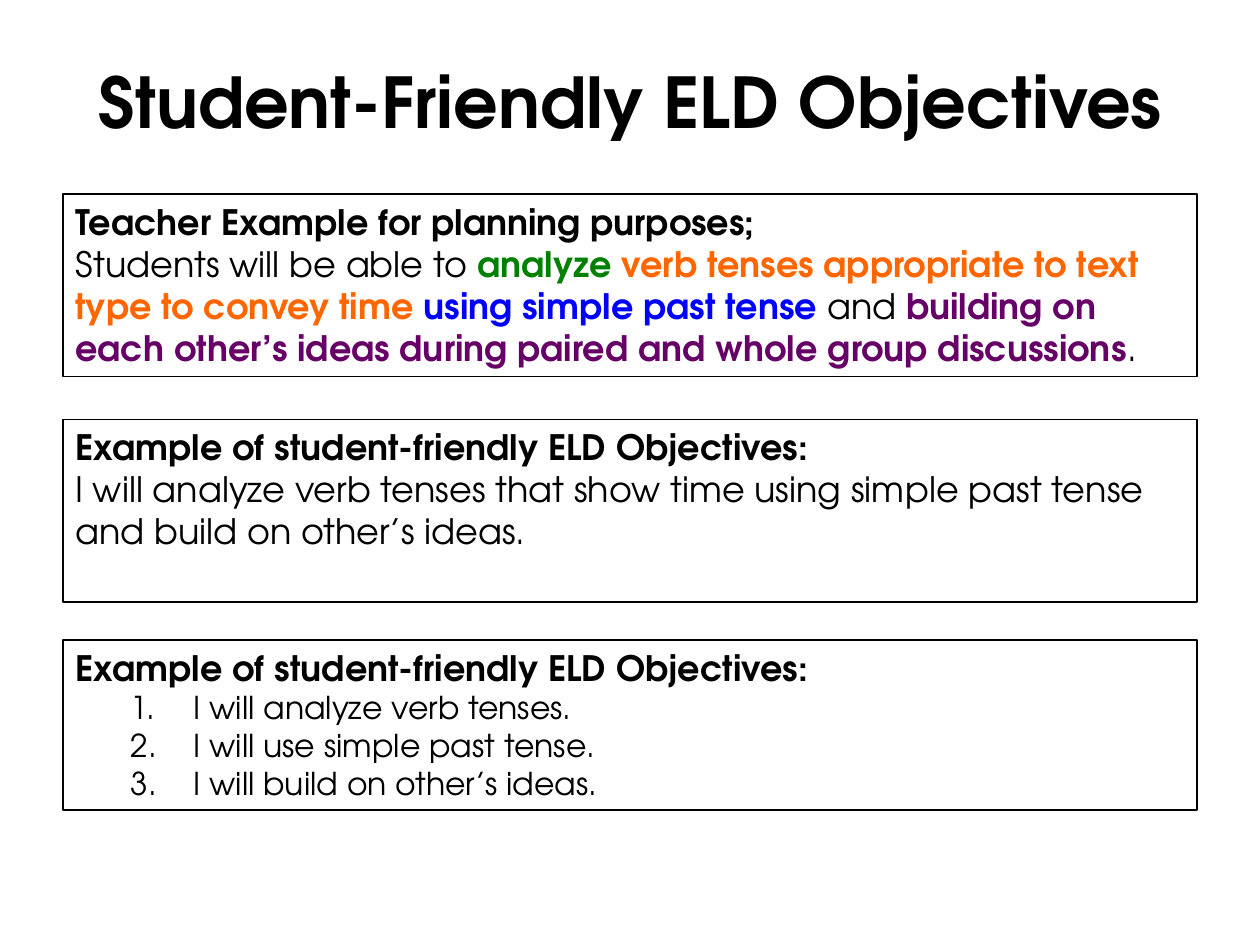
from lxml import etree
from pptx import Presentation
from pptx import util as u
from pptx.dml.color import RGBColor
from pptx.enum import shapes, text
from pptx.oxml import parse_xml
from pptx.oxml.ns import nsdecls, qn

FONT = "TeX Gyre Adventor"
BLACK = RGBColor(0x00, 0x00, 0x00)
GREEN = RGBColor(0x00, 0x80, 0x00)
ORANGE = RGBColor(0xFF, 0x66, 0x00)
BLUE = RGBColor(0x00, 0x00, 0xFF)
PURPLE = RGBColor(0x66, 0x00, 0x66)

LEFT, WIDTH = u.Cm(1.27), u.Cm(22.86)
STUDENT_HEADING = [("Example of student-friendly ELD Objectives:", BLACK, True)]


def add_run(paragraph, wording, size, color, bold):
    run = paragraph.add_run()
    run.text = wording
    font_format = {"name": FONT, "size": u.Pt(size), "bold": bold}
    for name, value in font_format.items():
        setattr(run.font, name, value)
    run.font.color.rgb = color
    return run


presentation = Presentation()
presentation.slide_width = u.Cm(25.4)
presentation.slide_height = u.Cm(19.05)
slide = presentation.slides.add_slide(presentation.slide_layouts[5])

title = slide.shapes.title
title_place = {"left": LEFT, "top": u.Cm(0.71), "width": WIDTH, "height": u.Cm(2.62)}
for name, value in title_place.items():
    setattr(title, name, value)
title_frame = title.text_frame
title_format = {
    "word_wrap": True,
    "auto_size": text.MSO_AUTO_SIZE.NONE,
    "vertical_anchor": text.MSO_ANCHOR.MIDDLE,
}
for name, value in title_format.items():
    setattr(title_frame, name, value)
title_paragraph = title_frame.paragraphs[0]
title_paragraph.alignment = text.PP_ALIGN.CENTER
title_run = add_run(title_paragraph, "Student-Friendly ELD Objectives", 40, BLACK, True)
text_shadow = parse_xml(
    f'<a:effectLst {nsdecls("a")}>'
    '<a:outerShdw blurRad="50800" dist="38100" dir="2700000" algn="tl">'
    '<a:srgbClr val="000000"><a:alpha val="43000"/></a:srgbClr>'
    "</a:outerShdw></a:effectLst>"
)
title_run.font._element.find(qn("a:solidFill")).addnext(text_shadow)

boxes = [
    (3.91, 3.68, [
        [("Teacher Example for planning purposes;", BLACK, True)],
        [
            ("Students will be able to ", BLACK, False),
            ("analyze ", GREEN, True),
            ("verb tenses appropriate to text type to convey time ", ORANGE, True),
            ("using simple past tense ", BLUE, True),
            ("and ", BLACK, False),
            ("building on each other’s ideas during paired and whole group discussions",
             PURPLE, True),
            (".", BLACK, False),
        ],
    ], []),
    (8.46, 3.68, [
        STUDENT_HEADING,
        [("I will analyze verb tenses that show time using simple past tense "
          "and build on other’s ideas.", BLACK, False)],
    ], []),
    (12.9, 3.43, [STUDENT_HEADING], [
        "I will analyze verb tenses.",
        "I will use simple past tense.",
        "I will build on other’s ideas.",
    ]),
]

box_format = {
    "word_wrap": True,
    "auto_size": text.MSO_AUTO_SIZE.NONE,
    "vertical_anchor": text.MSO_ANCHOR.TOP,
}
for top, height, paragraphs, numbered_items in boxes:
    box = slide.shapes.add_shape(
        shapes.MSO_SHAPE.RECTANGLE, LEFT, u.Cm(top), WIDTH, u.Cm(height))
    box.shadow.inherit = False
    box.fill.background()
    box.line.color.rgb = BLACK
    box.line.width = u.Pt(0.75)
    frame = box.text_frame
    for name, value in box_format.items():
        setattr(frame, name, value)

    for index, runs in enumerate(paragraphs):
        paragraph = frame.add_paragraph() if index else frame.paragraphs[0]
        paragraph.alignment = text.PP_ALIGN.LEFT
        for wording, color, bold in runs:
            add_run(paragraph, wording, 20, color, bold)

    for item in numbered_items:
        paragraph = frame.add_paragraph()
        paragraph.alignment = text.PP_ALIGN.LEFT
        paragraph.level = 1
        add_run(paragraph, item, 18, BLACK, False)
        properties = paragraph._p.get_or_add_pPr()
        properties.set("marL", str(u.Cm(2.39)))
        properties.set("indent", str(-u.Cm(1.27)))
        bullet_font = etree.SubElement(properties, qn("a:buFont"))
        bullet_font.set("typeface", FONT)
        numbering = etree.SubElement(properties, qn("a:buAutoNum"))
        numbering.set("type", "arabicPeriod")

presentation.save("out.pptx")
